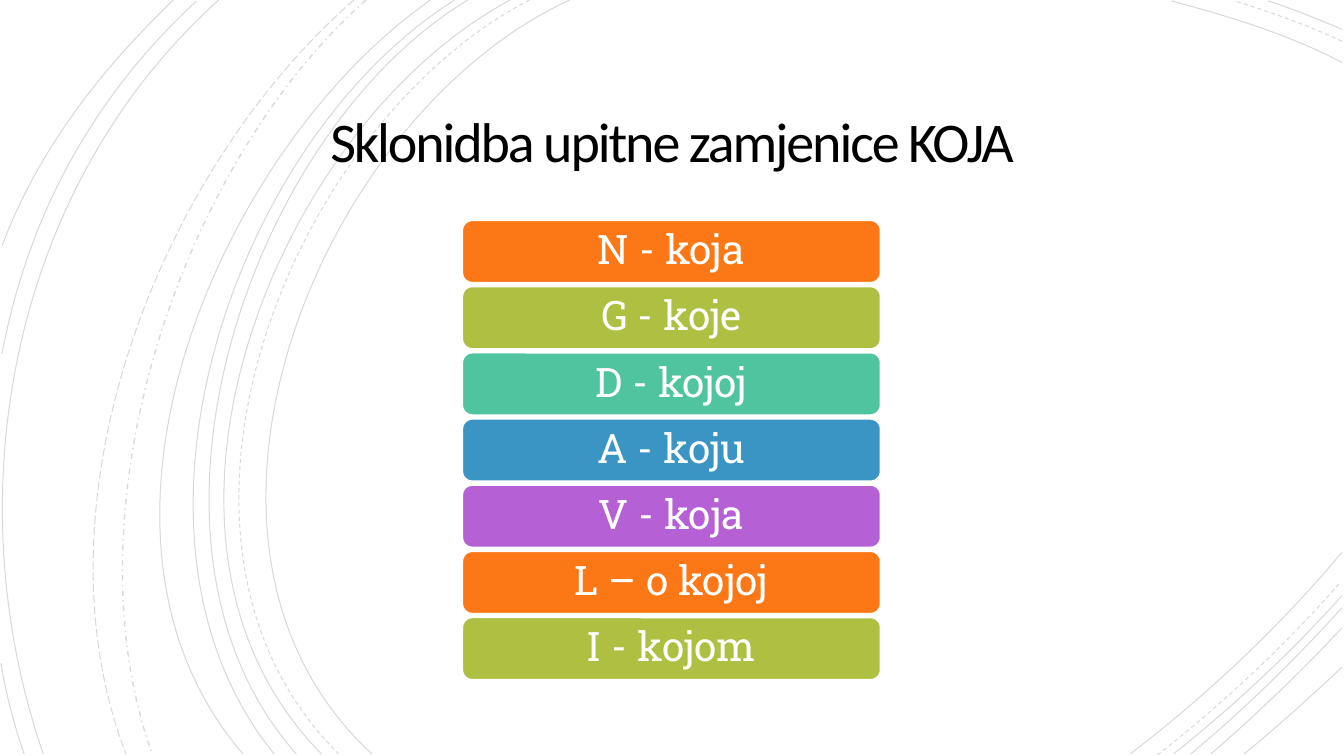
from itertools import cycle

from lxml.etree import SubElement
from pptx import Presentation
from pptx.dml.color import RGBColor
from pptx.enum.dml import MSO_LINE
from pptx.enum.shapes import MSO_SHAPE
from pptx.enum.text import MSO_ANCHOR, MSO_AUTO_SIZE, PP_ALIGN
from pptx.oxml.ns import qn
from pptx.util import Inches, Pt

BLACK = RGBColor(0x00, 0x00, 0x00)
WHITE = RGBColor(0xFF, 0xFF, 0xFF)
ORANGE = RGBColor(0xFC, 0x77, 0x15)
OLIVE = RGBColor(0xAF, 0xBF, 0x41)
TEAL = RGBColor(0x50, 0xC4, 0x9F)
BLUE = RGBColor(0x3B, 0x95, 0xC4)
PURPLE = RGBColor(0xB5, 0x60, 0xD4)
CASE_COLORS = (ORANGE, OLIVE, TEAL, BLUE, PURPLE)

SLIDE_WIDTH, SLIDE_HEIGHT = 13.33, 7.5
ARC_OPACITY = 15
BAR_SHARE = 0.96

DECLENSION = (
    "N - koja", "G - koje", "D - kojoj", "A - koju",
    "V - koja", "L – o kojoj", "I - kojom",
)

SOLID_ARCS = (
    ((5.65, 0), (3.15, 1.15), (1.43, 5.4), (3.69, 7.48)),
    ((13.31, 0.62), (12.78, 0.34), (12.18, 0.16), (11.62, 0.01)),
    ((11.21, 7.48), (11.97, 6.9), (12.69, 6.22), (13.31, 5.48)),
    ((5.06, 0), (2.7, 1.27), (1.1, 5.37), (3.19, 7.48)),
    ((13.31, 0.29), (13.07, 0.19), (12.83, 0.09), (12.58, 0.01)),
    ((11.64, 7.48), (12.23, 7.01), (12.8, 6.48), (13.31, 5.91)),
    ((4.64, 0), (2.44, 1.33), (1.1, 5.41), (2.94, 7.48)),
    ((11.81, 7.48), (12.34, 7.04), (12.84, 6.55), (13.31, 6.03)),
    ((4.51, 0), (2.31, 1.38), (0.97, 5.33), (2.72, 7.48)),
    ((12.01, 7.48), (12.46, 7.09), (12.9, 6.67), (13.31, 6.23)),
    ((4.27, 0), (2.17, 1.47), (0.53, 5.29), (2.41, 7.48)),
    ((12.34, 7.48), (12.67, 7.21), (12.99, 6.92), (13.31, 6.62)),
    ((2.17, 0), (0.11, 1.85), (-0.46, 4.9), (0.43, 7.48)),
    ((1.95, 0.01), (0.92, 0.96), (0.28, 2.14), (0.02, 3.51)),
    ((0.01, 6.58), (0.06, 6.89), (0.14, 7.19), (0.24, 7.48)),
    ((1.72, 0), (1, 0.69), (0.37, 1.5), (0.02, 2.44)),
)
DASHED_ARCS = (
    ((5.25, 0), (2.85, 1.25), (1.23, 5.37), (3.36, 7.48)),
    ((13.31, 0.41), (12.97, 0.25), (12.6, 0.12), (12.25, 0.01)),
    ((11.48, 7.49), (12.13, 6.98), (12.75, 6.4), (13.3, 5.77)),
)
DASH_DOT_ARCS = (((3.63, 0), (1.76, 1.66), (0.65, 5.09), (1.51, 7.48)),)
LONG_DASH_ARCS = (((3.51, 0), (1.57, 1.69), (0.29, 4.99), (1.25, 7.48)),)

ARC_STYLES = (
    (SOLID_ARCS, MSO_LINE.SOLID, 0.75),
    (DASHED_ARCS, MSO_LINE.DASH, 0.75),
    (DASH_DOT_ARCS, MSO_LINE.DASH_DOT, 1),
    (LONG_DASH_ARCS, MSO_LINE.LONG_DASH, 0.75),
)


def bend(arc):
    outline = next(arc.element.iter(qn("a:path")))
    curve = SubElement(outline, qn("a:cubicBezTo"))
    for segment in outline.findall(qn("a:lnTo")):
        curve.append(segment[0])
        outline.remove(segment)


def add_arc(shapes, box, points, dash, weight):
    left, top, width, height = box
    start, *rest = [
        (Inches(left + x / SLIDE_WIDTH * width), Inches(top + y / SLIDE_HEIGHT * height))
        for x, y in points
    ]
    builder = shapes.build_freeform(*start)
    builder.add_line_segments(rest, close=False)
    arc = builder.convert_to_shape()
    bend(arc)
    arc.shadow.inherit = False
    arc.fill.background()
    arc.line.color.rgb = BLACK
    arc.line.width = Pt(weight)
    arc.line.dash_style = dash
    ink = next(arc.line._get_or_add_ln().iter(qn("a:srgbClr")))
    SubElement(ink, qn("a:alpha"), val=str(ARC_OPACITY * 1000))


def add_backdrop(slide, box):
    backdrop = slide.shapes.add_group_shape()
    for arcs, dash, weight in ARC_STYLES:
        for points in arcs:
            add_arc(backdrop.shapes, box, points, dash, weight)


def set_heading(slide, box, wording):
    heading = slide.shapes.title
    heading.left, heading.top, heading.width, heading.height = map(Inches, box)
    frame = heading.text_frame
    frame.text = wording
    frame.word_wrap = True
    frame.auto_size = MSO_AUTO_SIZE.NONE
    frame.vertical_anchor = MSO_ANCHOR.MIDDLE
    frame.margin_left = frame.margin_right = Inches(0.25)
    frame.margin_top = frame.margin_bottom = Inches(0.25)
    line = frame.paragraphs[0]
    line.alignment = PP_ALIGN.CENTER
    line.line_spacing = 0.85
    line.font.name = "Calibri"
    line.font.size = Pt(40)
    line.font.color.rgb = BLACK
    line.runs[0].font._element.set("spc", "-150")


def add_case_bar(slide, box, wording, color):
    bar = slide.shapes.add_shape(MSO_SHAPE.ROUNDED_RECTANGLE, *map(Inches, box))
    bar.shadow.inherit = False
    bar.fill.solid()
    bar.fill.fore_color.rgb = color
    bar.line.color.rgb = WHITE
    bar.line.width = Pt(2)
    frame = bar.text_frame
    frame.text = wording
    frame.word_wrap = True
    frame.vertical_anchor = MSO_ANCHOR.MIDDLE
    frame.margin_left = frame.margin_right = Inches(0.12)
    frame.margin_top = frame.margin_bottom = Inches(0.06)
    line = frame.paragraphs[0]
    line.alignment = PP_ALIGN.CENTER
    line.line_spacing = 0.9
    line.font.name = "Roboto Slab"
    line.font.size = Pt(29)
    line.font.color.rgb = WHITE


def add_declension(slide, box):
    left, top, width, height = box
    pitch = height / (len(DECLENSION) - 1 + BAR_SHARE)
    for row, (wording, color) in enumerate(zip(DECLENSION, cycle(CASE_COLORS))):
        bar_box = (left, top + row * pitch, width, pitch * BAR_SHARE)
        add_case_bar(slide, bar_box, wording, color)


def main():
    deck = Presentation()
    deck.slide_width = Inches(SLIDE_WIDTH)
    deck.slide_height = Inches(SLIDE_HEIGHT)
    slide = deck.slides.add_slide(deck.slide_layouts[5])
    slide.background.fill.solid()
    slide.background.fill.fore_color.rgb = WHITE
    add_backdrop(slide, (0, 0, SLIDE_WIDTH, SLIDE_HEIGHT))
    set_heading(slide, (1.92, 0.87, 9.49, 1.15), "Sklonidba upitne zamjenice KOJA")
    add_declension(slide, (4.58, 2.18, 4.16, 4.57))
    deck.save("out.pptx")


if __name__ == "__main__":
    main()
